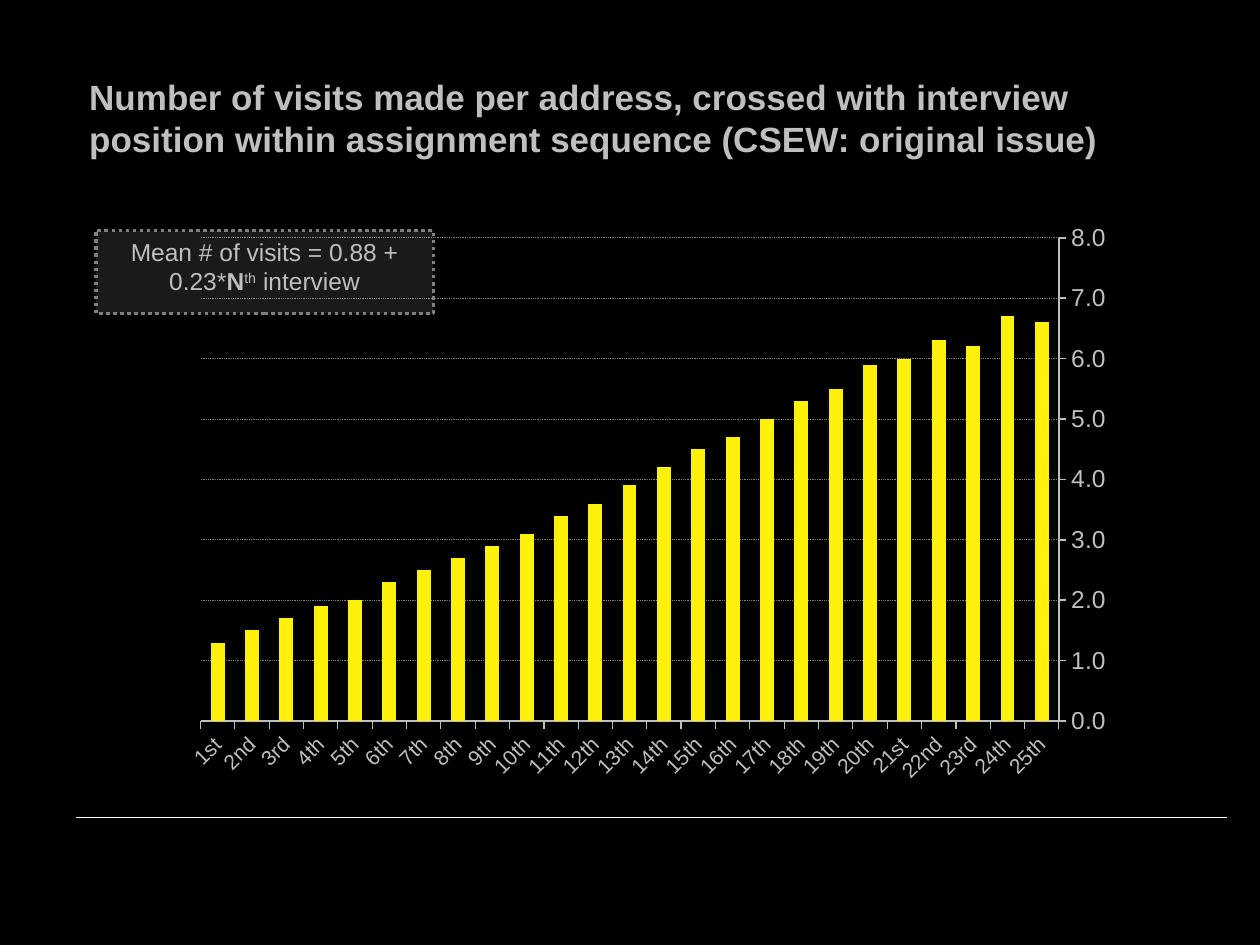
"""Builds a slide charting mean visits per address by interview position."""
from lxml import etree
from pptx import Presentation
from pptx import util as u
from pptx.chart.data import CategoryChartData
from pptx.dml.color import RGBColor
from pptx.enum import chart as ch, dml, shapes, text
from pptx.oxml import parse_xml
from pptx.oxml.ns import nsdecls, qn

BLACK = RGBColor(0, 0, 0)
WHITE = RGBColor(0xFF, 0xFF, 0xFF)
SILVER = RGBColor(0xBF, 0xBF, 0xBF)
GREY = RGBColor(0x80, 0x80, 0x80)
YELLOW = RGBColor(0xFF, 0xF1, 0x0B)
FONT = "Arial"
W, H = u.Inches(10), u.Inches(7.5)

VISITS = [1.3, 1.5, 1.7, 1.9, 2.0, 2.3, 2.5, 2.7, 2.9, 3.1, 3.4, 3.6, 3.9,
          4.2, 4.5, 4.7, 5.0, 5.3, 5.5, 5.9, 6.0, 6.3, 6.2, 6.7, 6.6]
SUFFIXES = {1: "st", 2: "nd", 3: "rd"}
PLOT_AREA = {"x": 0.08, "y": 0.066, "w": 0.837, "h": 0.812}


def ordinal(n):
    """Return n as an English ordinal, such as 21st."""
    suffix = "th" if 10 < n < 14 else SUFFIXES.get(n % 10, "th")
    return f"{n}{suffix}"


def box(x, y, w, h):
    """Turn shares of the slide's size into left, top, width and height."""
    return int(x * W), int(y * H), int(w * W), int(h * H)


def style_font(font, size, color=SILVER, bold=False):
    """Set the typeface, size, colour and weight of a font."""
    font.name, font.size, font.bold = FONT, u.Pt(size), bold
    font.color.rgb = color


def style_line(line, color, width, dash=None):
    """Set the colour, width and dash of a line."""
    line.color.rgb, line.width = color, u.Pt(width)
    if dash:
        line.dash_style = dash


def add_run(p, words, size, bold=False, baseline=0):
    """Append one run of text to a paragraph."""
    r = p.add_run()
    r.text = words
    style_font(r.font, size, bold=bold)
    if baseline:
        r.font._element.set("baseline", str(baseline * 1000))


def add_title(s, words):
    """Add the slide title."""
    tf = s.shapes.add_textbox(*box(0.061, 0.073, 0.88, 0.09)).text_frame
    tf.word_wrap = True
    add_run(tf.paragraphs[0], words, 20, bold=True)


def add_rule(s):
    """Add the horizontal rule near the foot of the slide."""
    y = int(0.865 * H)
    sp = s.shapes.add_connector(
        shapes.MSO_CONNECTOR.STRAIGHT, int(0.974 * W), y, int(0.06 * W), y)
    style_line(sp.line, WHITE, 0.75)
    etree.SubElement(sp._element.spPr, qn("a:effectLst"))


def set_plot_area(chart):
    """Fix the inner plot area at its shares of the chart."""
    modes = '<c:layoutTarget val="inner"/><c:xMode val="edge"/><c:yMode val="edge"/>'
    sizes = "".join(f'<c:{k} val="{v}"/>' for k, v in PLOT_AREA.items())
    area = chart._chartSpace.chart.plotArea
    for old in area.findall(qn("c:layout")):
        area.remove(old)
    area.insert(0, parse_xml(
        f'<c:layout {nsdecls("c")}><c:manualLayout>{modes}{sizes}'
        '</c:manualLayout></c:layout>'))


def move_value_axis_right(chart):
    """Let the value axis cross the categories at their far end."""
    axis = chart.value_axis._element
    axis.find(qn("c:axPos")).set("val", "r")
    for tag in ("c:crosses", "c:crossesAt", "c:crossBetween"):
        for old in axis.findall(qn(tag)):
            axis.remove(old)
    anchor = axis.find(qn("c:crossAx"))
    for tag, val in (("crossBetween", "between"), ("crosses", "max")):
        anchor.addnext(parse_xml(f'<c:{tag} {nsdecls("c")} val="{val}"/>'))


def style_axis(axis, size, width):
    """Set the ticks, labels and line of an axis."""
    axis.major_tick_mark = ch.XL_TICK_MARK.OUTSIDE
    axis.minor_tick_mark = ch.XL_TICK_MARK.NONE
    axis.tick_label_position = ch.XL_TICK_LABEL_POSITION.NEXT_TO_AXIS
    style_font(axis.tick_labels.font, size)
    style_line(axis.format.line, SILVER, width)


def add_visits_chart(s):
    """Add the column chart of visits, with its value axis at the right."""
    data = CategoryChartData(number_format="0.0")
    data.categories = [ordinal(n) for n in range(1, len(VISITS) + 1)]
    data.add_series("Series 1", VISITS)
    chart = s.shapes.add_chart(ch.XL_CHART_TYPE.COLUMN_CLUSTERED,
                               *box(0.094, 0.21, 0.814, 0.63), data).chart
    chart.has_legend = chart.has_title = False
    style_font(chart.font, 18)
    set_plot_area(chart)
    move_value_axis_right(chart)

    plot = chart.plots[0]
    plot.gap_width, plot.vary_by_categories = 150, False
    fill = plot.series[0].format.fill
    fill.solid()
    fill.fore_color.rgb = YELLOW

    cats, vals = chart.category_axis, chart.value_axis
    style_axis(cats, 12, 0.75)
    cats._element.txPr.bodyPr.set("rot", str(-45 * 60000))
    style_axis(vals, 14, 1)
    vals.minimum_scale, vals.maximum_scale, vals.major_unit = 0, 8, 1
    vals.tick_labels.number_format = "0.0"
    vals.tick_labels.number_format_is_linked = False
    style_line(vals.major_gridlines.format.line, GREY, 0.5,
               dml.MSO_LINE.ROUND_DOT)


def add_formula(s):
    """Add the translucent box that holds the fitted formula."""
    sp = s.shapes.add_shape(shapes.MSO_SHAPE.RECTANGLE,
                            *box(0.076, 0.244, 0.268, 0.088))
    sp.shadow.inherit = False
    sp.fill.solid()
    sp.fill.fore_color.rgb = WHITE
    color = sp._element.spPr.find(qn("a:solidFill"))[0]
    etree.SubElement(color, qn("a:alpha"), val="10000")
    style_line(sp.line, GREY, 2, dml.MSO_LINE.ROUND_DOT)
    tf = sp.text_frame
    tf.word_wrap = True
    tf.vertical_anchor = text.MSO_ANCHOR.TOP
    p = tf.paragraphs[0]
    p.alignment = text.PP_ALIGN.CENTER
    add_run(p, "Mean # of visits = 0.88 + 0.23*", 14)
    add_run(p, "N", 14, bold=True)
    add_run(p, "th", 14, baseline=30)
    add_run(p, " interview", 14)


def main():
    """Build and save the slide."""
    prs = Presentation()
    prs.slide_width, prs.slide_height = W, H
    s = prs.slides.add_slide(prs.slide_layouts[6])
    s.background.fill.solid()
    s.background.fill.fore_color.rgb = BLACK
    add_rule(s)
    add_title(s, "Number of visits made per address, crossed with interview "
                 "position within assignment sequence (CSEW: original issue)")
    add_visits_chart(s)
    add_formula(s)
    prs.save("out.pptx")


if __name__ == "__main__":
    main()
